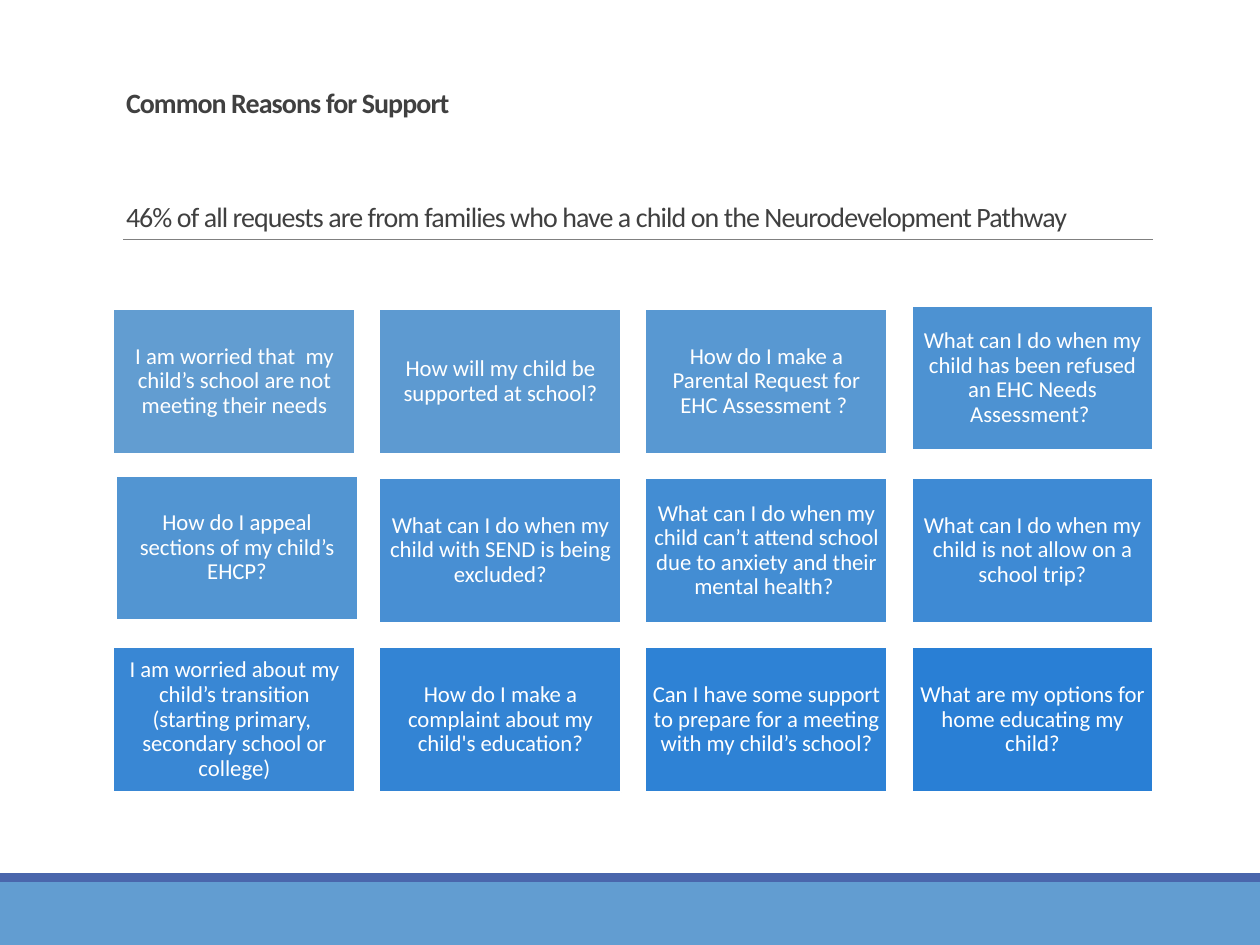
from pptx import Presentation
from pptx.dml.color import RGBColor
from pptx.enum.shapes import MSO_CONNECTOR, MSO_SHAPE
from pptx.enum.text import MSO_ANCHOR as Anchor, MSO_AUTO_SIZE as AutoSize, PP_ALIGN as Align
from pptx.oxml.ns import qn
from pptx.util import Pt
from lxml.etree import SubElement

COLORS = {
    "band": "629DD1", "stripe": "4A66AC", "rule": "808080", "title": "404040",
    "first": "629DD1", "last": "297FD5", "white": "FFFFFF",
}
FONT = "Calibri"
LEFT, TOP, CARD_W, CARD_H = 64.8, 176.6, 138.2, 82.8
PITCH_X, PITCH_Y, COLUMNS = 152, 96.6, 4

TITLE = "Common Reasons for Support"
SUBTITLE = "46% of all requests are from families who have a child on the Neurodevelopment Pathway"
REASONS = [
    "I am worried that  my child’s school are not meeting their needs",
    "How will my child be supported at school?",
    "How do I make a Parental Request for EHC Assessment ? ",
    "What can I do when my child has been refused an EHC Needs Assessment? ",
    "How do I appeal sections of my child’s EHCP?",
    "What can I do when my child with SEND is being excluded?",
    "What can I do when my child can’t attend school due to anxiety and their mental health? ",
    "What can I do when my child is not allow on a school trip?",
    "I am worried about my child’s transition (starting primary,  secondary school or college)",
    "How do I make a complaint about my child's education?",
    "Can I have some support to prepare for a meeting with my child’s school?",
    "What are my options for home educating my child?",
]
# Two cards sit slightly off the grid and swap their shades: index -> (dx, dy, shade)
MOVED = {3: (0, -2, 4), 4: (1.5, -1.5, 3)}


def rgb(name):
    return RGBColor.from_string(COLORS[name])


def set_all(obj, values):
    for name, value in values.items():
        setattr(obj, name, value)


def shade(step):
    """Blend from the first card colour to the last one."""
    t = step / (len(REASONS) - 1)
    return RGBColor(*(round(a + (b - a) * t) for a, b in zip(rgb("first"), rgb("last"))))


def add_rect(slide, x, y, w, h, color):
    sp = slide.shapes.add_shape(MSO_SHAPE.RECTANGLE, Pt(x), Pt(y), Pt(w), Pt(h))
    sp.shadow.inherit = False
    sp.fill.solid()
    sp.fill.fore_color.rgb = color
    sp.line.fill.background()
    return sp


def add_rule(slide, x1, x2, y):
    line = slide.shapes.add_connector(MSO_CONNECTOR.STRAIGHT, Pt(x1), Pt(y), Pt(x2), Pt(y))
    line.line.color.rgb = rgb("rule")
    line.line.width = Pt(0.5)
    SubElement(line._element.spPr, qn("a:effectLst"))


def add_run(p, text, size, color, bold=False):
    r = p.add_run()
    r.text = text
    set_all(r.font, {"name": FONT, "size": Pt(size), "bold": bold})
    r.font.color.rgb = rgb(color)
    return r


def fill_title(slide):
    sp = slide.shapes.title
    set_all(sp, {"left": Pt(64.8), "top": Pt(22.3), "width": Pt(594), "height": Pt(114.5)})
    tf = sp.text_frame
    set_all(tf, {"vertical_anchor": Anchor.BOTTOM, "word_wrap": True,
                 "auto_size": AutoSize.NONE})
    lines = [(tf.paragraphs[0], TITLE, True, 0), (tf.add_paragraph(), SUBTITLE, False, 49)]
    for p, text, bold, before in lines:
        set_all(p, {"alignment": Align.LEFT, "line_spacing": 0.85, "space_before": Pt(before)})
        r = add_run(p, text, 16, "title", bold)
        r._r.get_or_add_rPr().set("spc", "-50")


def add_card(slide, index, text):
    row, col = divmod(index, COLUMNS)
    dx, dy, step = MOVED.get(index, (0, 0, index))
    sp = add_rect(slide, LEFT + col * PITCH_X + dx, TOP + row * PITCH_Y + dy,
                  CARD_W, CARD_H, shade(step))
    sp.line.color.rgb = rgb("white")
    sp.line.width = Pt(1.25)
    tf = sp.text_frame
    set_all(tf, {"word_wrap": True, "vertical_anchor": Anchor.MIDDLE})
    set_all(tf, {f"margin_{side}": Pt(3.6) for side in ("left", "top", "right", "bottom")})
    p = tf.paragraphs[0]
    set_all(p, {"alignment": Align.CENTER, "line_spacing": 0.9})
    add_run(p, text, 13, "white")


def main():
    prs = Presentation()
    set_all(prs, {"slide_width": Pt(720), "slide_height": Pt(540)})
    slide = prs.slides.add_slide(prs.slide_layouts[5])
    add_rect(slide, 0, 504, 720, 36, rgb("band"))
    add_rect(slide, 0, 499, 720, 5, rgb("stripe"))
    add_rule(slide, 70.5, 659, 136.8)
    fill_title(slide)
    for index, text in enumerate(REASONS):
        add_card(slide, index, text)
    prs.save("out.pptx")


if __name__ == "__main__":
    main()
